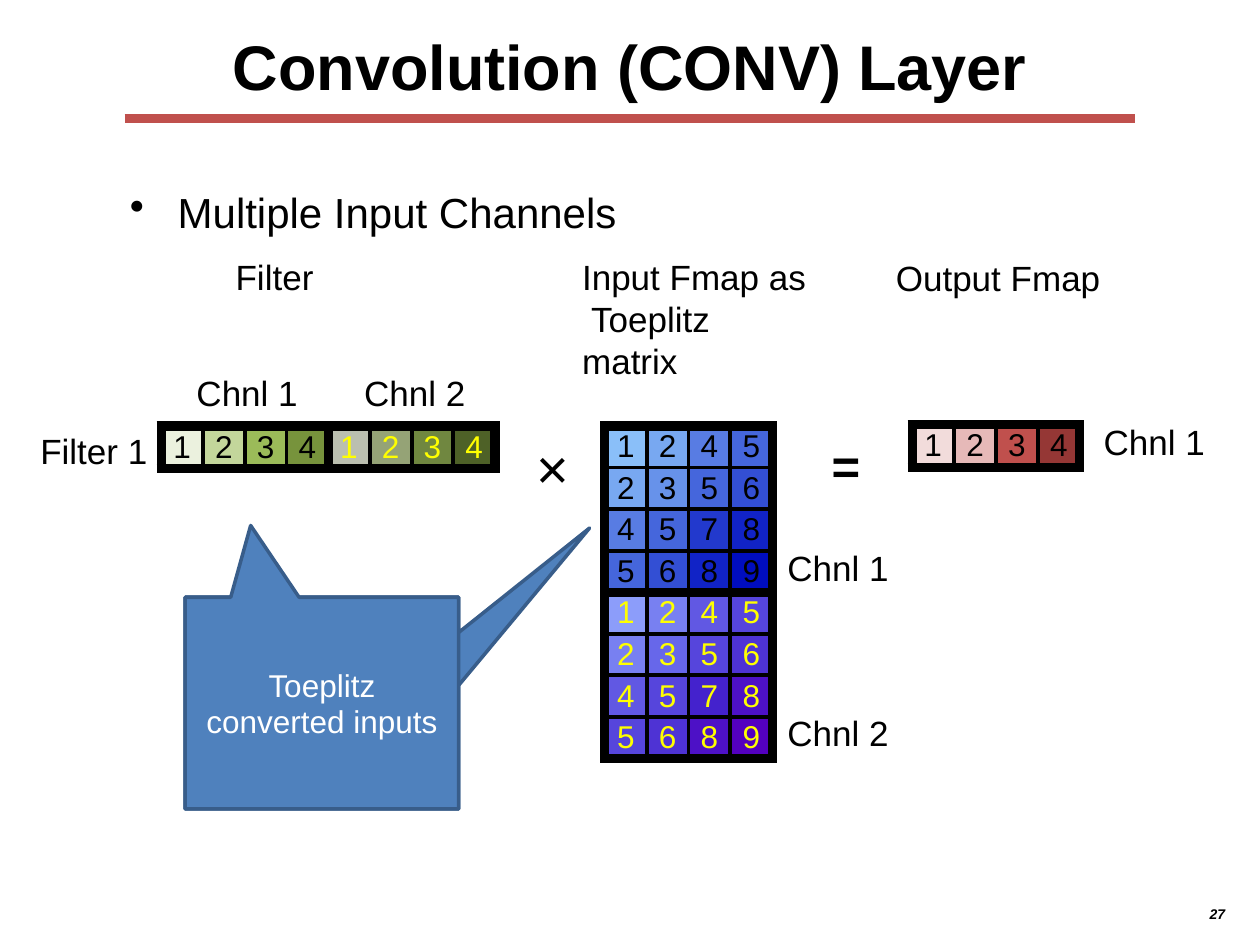
from lxml.etree import SubElement
from pptx import Presentation
from pptx.dml.color import RGBColor as RGB
from pptx.enum.shapes import MSO_CONNECTOR as Line, MSO_SHAPE as Shape
from pptx.enum.text import MSO_ANCHOR as Anchor, PP_ALIGN as Align
from pptx.oxml import parse_xml
from pptx.oxml.ns import nsdecls, qn
from pptx.util import Inches, Pt

BLACK = RGB(0, 0, 0)
WHITE = RGB(255, 255, 255)
YELLOW = RGB(255, 255, 0)
RED = RGB(0xC0, 0x50, 0x4D)
BLUE = RGB(0x4F, 0x81, 0xBD)
NAVY = RGB(0x38, 0x5D, 0x8A)

GREENS = ["EBF1DE C3D69B 9BBB59 77933C BBBFB0 95A376 708740 4E6127"]
REDS = ["F2DCDB E6B9B8 C0504D 953735"]
BLUES = [
    "8ABFF9 78A8F1 587CE3 4566DC",
    "78A8F1 6792EA 4566DC 334FD4",
    "587CE3 4566DC 2239CD 1123C6",
    "4566DC 334FD4 1123C6 000DBF",
    "8C9DFA 7880F1 6158E3 5645DC",
    "7880F1 6767EA 5645DC 4E33D4",
    "6158E3 5645DC 4422CD 4D11C6",
    "5645DC 4E33D4 4D11C6 5300BF",
]
PATCH = ["1245", "2356", "4578", "5689"]

LABELS = [
    ("Filter", 1.87, 2.02, 0.75),
    ("Input Fmap as\v Toeplitz\vmatrix", 4.62, 2.02, 1.9),
    ("Output Fmap", 7.11, 2.03, 1.75),
    ("Chnl 1", 1.56, 2.94, 0.9),
    ("Chnl 2", 2.89, 2.94, 0.9),
    ("Filter 1", 0.32, 3.4, 0.92),
    ("Chnl 1", 6.25, 4.33, 0.9),
    ("Chnl 2", 6.25, 5.64, 0.9),
    ("Chnl 1", 8.76, 3.33, 0.9),
]


def style(para, size, color=BLACK, bold=False, italic=False):
    """Set the font of a paragraph."""
    font = para.font
    font.name, font.size = "Arial", Pt(size)
    font.bold, font.italic = bold, italic
    font.color.rgb = color


def trim(frame):
    """Remove nearly all of a text frame's margins."""
    frame.word_wrap = True
    frame.margin_left = frame.margin_right = frame.margin_bottom = 0
    frame.margin_top = Inches(0.01)


def label(slide, text, left, top, width, size=20, height=0.36, **looks):
    """Add a text box and return its paragraph."""
    box = slide.shapes.add_textbox(
        Inches(left), Inches(top), Inches(width), Inches(height))
    trim(box.text_frame)
    para = box.text_frame.paragraphs[0]
    para.text = text
    style(para, size, **looks)
    return para


def header(slide, left, top, width, height):
    """Place the title and the red rule under it."""
    title = slide.shapes.title
    title.left, title.top = Inches(left), Inches(top)
    title.width, title.height = Inches(width), Inches(height)
    frame = title.text_frame
    trim(frame)
    frame.vertical_anchor = Anchor.TOP
    para = frame.paragraphs[0]
    para.text = "Convolution (CONV) Layer"
    para.alignment = Align.CENTER
    style(para, 36, bold=True)
    y = Inches(0.94)
    rule = slide.shapes.add_connector(
        Line.STRAIGHT, Inches(0.99), y, Inches(9.01), y)
    rule.line.color.rgb = RED
    rule.line.width = Pt(5.5)
    SubElement(rule._element.spPr, qn("a:effectLst"))


def bullet(slide, left, top, width):
    """Add the bulleted heading."""
    para = label(slide, "Multiple Input Channels", left, top, width, 24, 0.43)
    props = para._p.get_or_add_pPr()
    props.set("marL", str(Inches(0.39)))
    props.set("indent", str(-Inches(0.38)))
    mark = parse_xml(f'<a:buChar {nsdecls("a")} char="•"/>')
    props.insert(0, mark)


def border(cell, row, col):
    """Draw cell edges, thick around each block of four by four."""
    edges = [("L", col % 4 == 0), ("R", col % 4 == 3),
             ("T", row % 4 == 0), ("B", row % 4 == 3)]
    props = cell._tc.get_or_add_tcPr()
    for spot, (side, thick) in enumerate(edges):
        width = Pt(6 if thick else 2.5)
        props.insert(spot, parse_xml(
            f'<a:ln{side} {nsdecls("a")} w="{width}"><a:solidFill>'
            f'<a:srgbClr val="{BLACK}"/></a:solidFill></a:ln{side}>'))


def grid(slide, left, top, width, height, digits, fills):
    """Add a matrix as a table, with yellow digits in channel 2."""
    rows, cols = len(digits), len(digits[0])
    table = slide.shapes.add_table(
        rows, cols, Inches(left), Inches(top),
        Inches(width), Inches(height)).table
    table.first_row = table.horz_banding = False
    for r, (line, hues) in enumerate(zip(digits, fills)):
        for c, (digit, hue) in enumerate(zip(line, hues.split())):
            cell = table.cell(r, c)
            cell.margin_left = cell.margin_right = 0
            cell.margin_top = cell.margin_bottom = 0
            cell.vertical_anchor = Anchor.MIDDLE
            cell.fill.solid()
            cell.fill.fore_color.rgb = RGB.from_string(hue)
            para = cell.text_frame.paragraphs[0]
            para.text = digit
            para.alignment = Align.CENTER
            style(para, 18, YELLOW if max(r, c) > 3 else BLACK)
            border(cell, 3 if rows == 1 else r, c)
            if rows == 1:
                top_edge = cell._tc.tcPr.find(qn("a:lnT"))
                top_edge.set("w", str(Pt(6)))


def callout(slide, left, top, width, height, tips):
    """Stack one callout for each tip, with the text in the last."""
    for x, y in tips:
        shape = slide.shapes.add_shape(
            Shape.RECTANGULAR_CALLOUT, Inches(left), Inches(top),
            Inches(width), Inches(height))
        shape.adjustments[0] = (x - left) / width - 0.5
        shape.adjustments[1] = (y - top) / height - 0.5
        shape.shadow.inherit = False
        shape.fill.solid()
        shape.fill.fore_color.rgb = BLUE
        shape.line.color.rgb = NAVY
        shape.line.width = Pt(2)
    frame = shape.text_frame
    trim(frame)
    frame.vertical_anchor = Anchor.MIDDLE
    para = frame.paragraphs[0]
    para.text = "Toeplitz\vconverted inputs"
    para.alignment = Align.CENTER
    para.line_spacing = Pt(20.9)
    style(para, 18, WHITE)


def main():
    """Build and save the slide."""
    deck = Presentation()
    deck.slide_width, deck.slide_height = Inches(10), Inches(7.5)
    slide = deck.slides.add_slide(deck.slide_layouts[5])
    header(slide, 1.73, 0.21, 6.54, 0.63)
    bullet(slide, 1.02, 1.47, 4.2)
    for item in LABELS:
        label(slide, *item)
    label(slide, "×", 4.26, 3.43, 0.35, 32, 0.56)
    label(slide, "=", 6.6, 3.45, 0.35, 28, 0.49, bold=True)
    grid(slide, 1.28, 3.38, 2.65, 0.34, ["12341234"], GREENS)
    grid(slide, 4.8, 3.38, 1.33, 2.64, PATCH * 2, BLUES)
    grid(slide, 7.24, 3.37, 1.33, 0.34, ["1234"], REDS)
    callout(slide, 1.47, 4.74, 2.17, 1.68, [(4.68, 4.19), (1.99, 4.17)])
    label(slide, "27", 9.6, 7.18, 0.2, 8, 0.15, bold=True, italic=True)
    deck.save("out.pptx")


if __name__ == "__main__":
    main()
